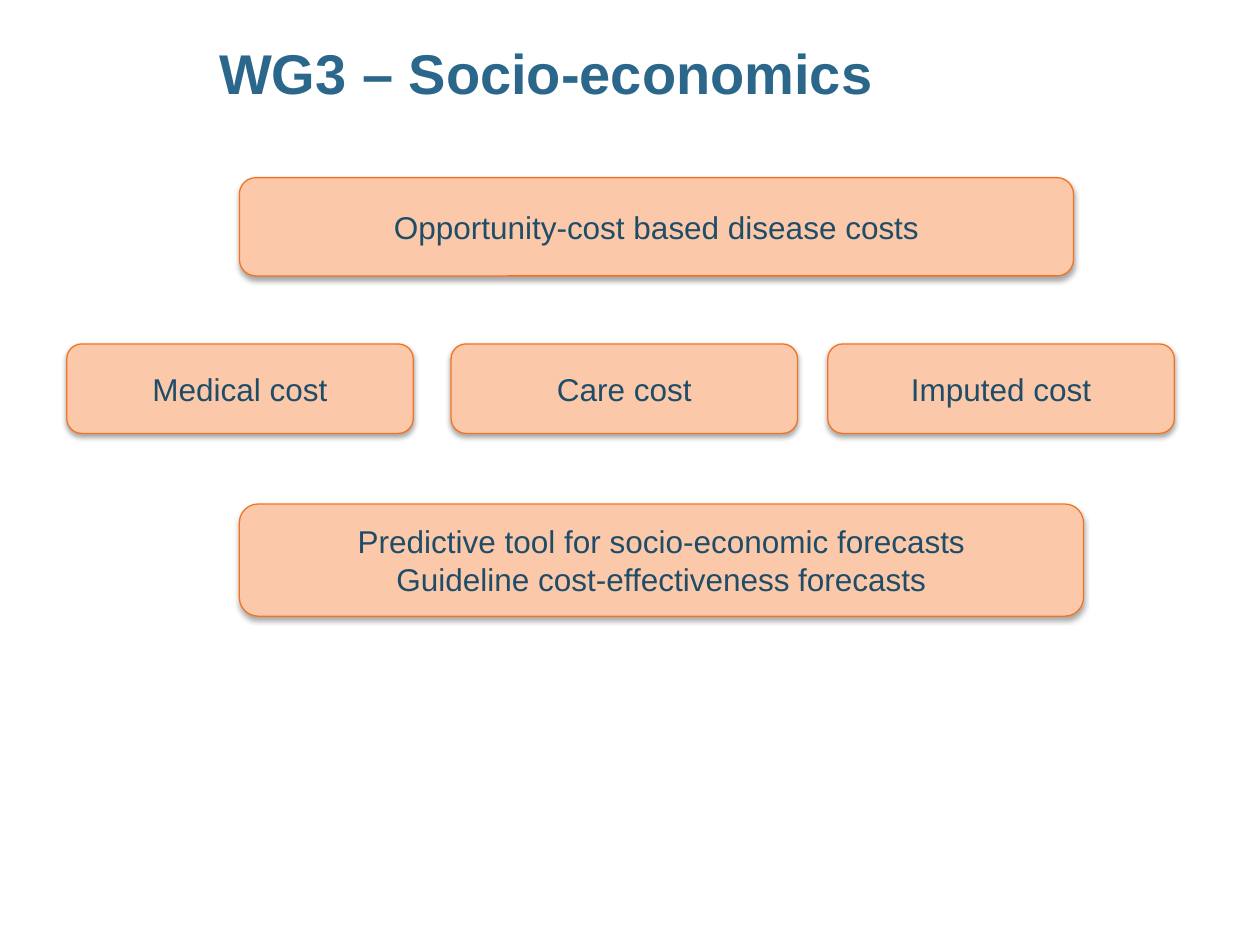
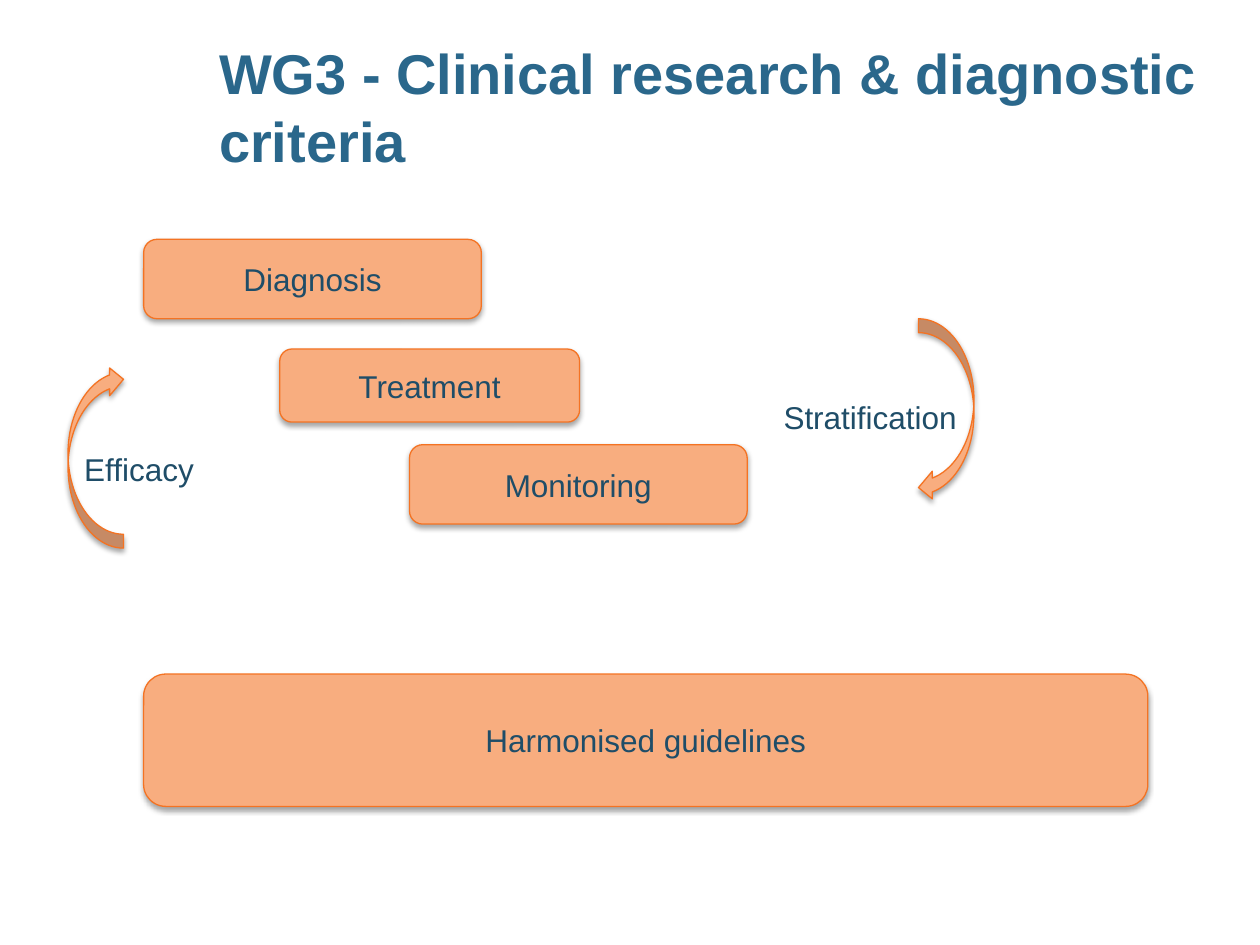
from lxml import etree
from pptx import Presentation, util as u
from pptx.dml.color import RGBColor
from pptx.enum import shapes, text
from pptx.oxml.ns import qn

COLOURS = {
    "title": "2A678B",
    "body": "1F4D68",
    "outline": "F47323",
    "pale_orange": "FBC9A9",
    "orange": "F8AD7F",
    "shadow": "000000",
}
FONT = "Arial"


def colour(name):
    return RGBColor.from_string(COLOURS[name])


def write(frame, content, *, size=18, ink="body", bold=False,
          align=text.PP_ALIGN.LEFT, anchor=text.MSO_ANCHOR.TOP, wrap=True):
    """Fill a text frame, one paragraph per line of content."""
    frame.text = content
    frame.word_wrap = wrap
    frame.vertical_anchor = anchor
    for paragraph in frame.paragraphs:
        paragraph.alignment = align
        font = paragraph.font
        font.name, font.size, font.bold = FONT, u.Pt(size), bold
        font.color.rgb = colour(ink)


class Deck:
    def __init__(self):
        self.presentation = Presentation()
        self.presentation.slide_width = u.Inches(10)
        self.presentation.slide_height = u.Inches(7.5)
        self.slide = None
        self.fill = None

    def new_slide(self, title, fill, title_width, title_height):
        layout = self.presentation.slide_layouts[6]
        self.slide = self.presentation.slides.add_slide(layout)
        self.fill = fill
        self.label(title, 1.64, 0.26, title_width, title_height,
                   size=32, ink="title", bold=True)

    def label(self, content, left, top, width, height, **style):
        box = self.slide.shapes.add_textbox(
            u.Inches(left), u.Inches(top), u.Inches(width), u.Inches(height))
        write(box.text_frame, content, **style)

    def solid(self, kind, left, top, width, height):
        shape = self.slide.shapes.add_shape(
            kind, u.Inches(left), u.Inches(top), u.Inches(width), u.Inches(height))
        shape.fill.solid()
        shape.fill.fore_color.rgb = colour(self.fill)
        shape.line.color.rgb = colour("outline")
        shape.line.width = u.Pt(0.75)
        self.soft_shadow(shape)
        return shape

    def soft_shadow(self, shape):
        shape.shadow.inherit = False
        effects = shape._element.spPr.find(qn("a:effectLst"))
        shadow = etree.SubElement(
            effects, qn("a:outerShdw"), blurRad=str(u.Pt(3.1)),
            dist=str(u.Pt(1.8)), dir="5400000", rotWithShape="0")
        tint = etree.SubElement(shadow, qn("a:srgbClr"), val=COLOURS["shadow"])
        etree.SubElement(tint, qn("a:alpha"), val="35000")

    def card(self, content, left, top, width, height):
        shape = self.solid(shapes.MSO_SHAPE.ROUNDED_RECTANGLE,
                           left, top, width, height)
        write(shape.text_frame, content, align=text.PP_ALIGN.CENTER,
              anchor=text.MSO_ANCHOR.MIDDLE)

    def curved_arrow(self, left, top, rotation=0):
        shape = self.solid(shapes.MSO_SHAPE.CURVED_LEFT_ARROW,
                           left, top, 0.44, 1.45)
        shape.rotation = rotation


def socio_economics(deck):
    deck.new_slide("WG3 – Socio-economics", "pale_orange", 7.57, 0.93)
    deck.card("Opportunity-cost based disease costs", 1.9, 1.41, 6.62, 0.78)

    # Cost types
    for name, left in (("Medical cost", 0.53), ("Care cost", 3.58),
                       ("Imputed cost", 6.57)):
        deck.card(name, left, 2.73, 2.75, 0.71)

    # Outcomes
    deck.card("Predictive tool for socio-economic forecasts\n"
              "Guideline cost-effectiveness forecasts", 1.9, 4, 6.7, 0.89)


def clinical_research(deck):
    deck.new_slide("WG3 - Clinical research & diagnostic criteria",
                   "orange", 8.06, 1.17)
    deck.card("Harmonised guidelines", 1.14, 5.35, 7.97, 1.05)

    # Staircase of clinical steps
    deck.card("Diagnosis", 1.14, 1.9, 2.68, 0.63)
    deck.card("Treatment", 2.22, 2.77, 2.38, 0.58)
    deck.card("Monitoring", 3.25, 3.53, 2.68, 0.63)

    # Feedback arrows with their labels
    deck.curved_arrow(0.54, 2.9, rotation=180)
    deck.label("Efficacy", 0.57, 3.52, 1.25, 0.4)
    deck.curved_arrow(7.29, 2.53)
    deck.label("Stratification", 6.12, 3.11, 1.59, 0.4, wrap=False)


def main():
    deck = Deck()
    socio_economics(deck)
    clinical_research(deck)
    deck.presentation.save("out.pptx")


if __name__ == "__main__":
    main()
